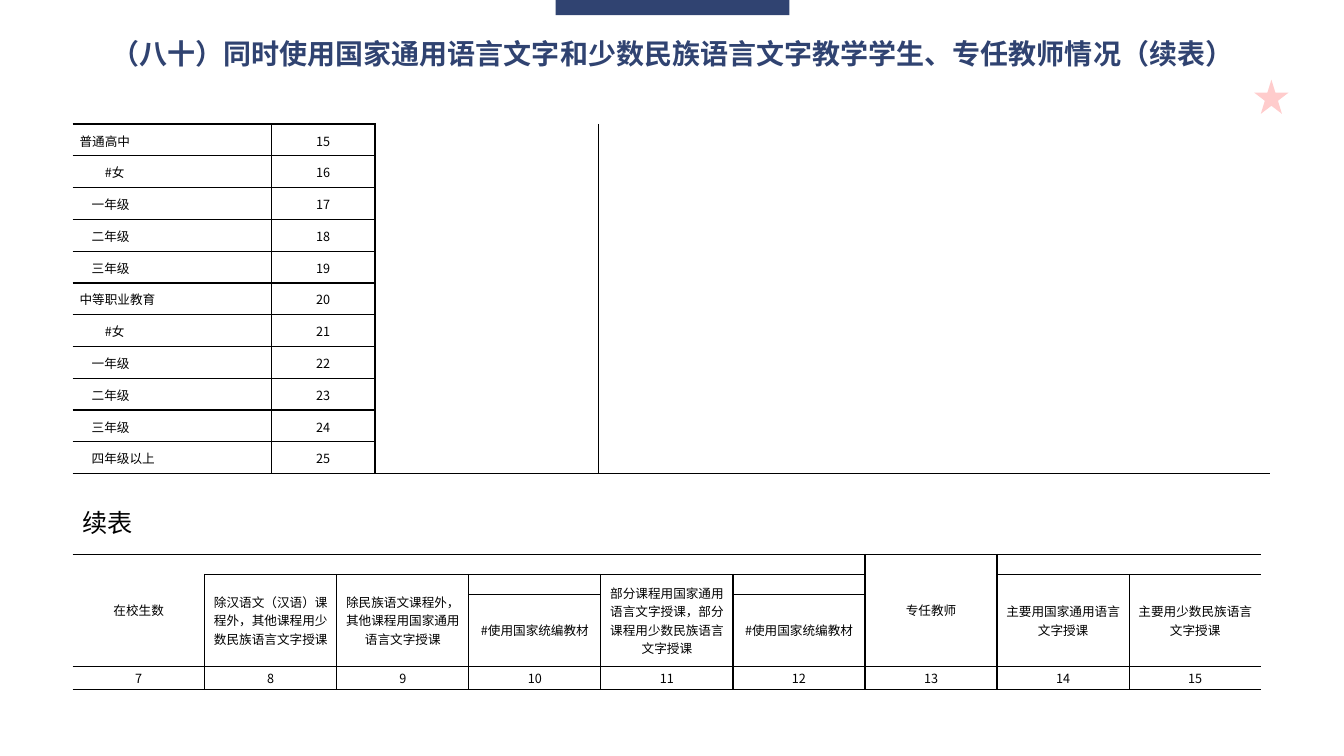
from dataclasses import dataclass

from lxml.etree import SubElement as Sub
from pptx import Presentation
from pptx.dml.color import RGBColor
from pptx.enum.shapes import MSO_SHAPE as Kind
from pptx.enum.text import MSO_ANCHOR as Anchor, MSO_AUTO_SIZE as Fit, PP_ALIGN as Align
from pptx.oxml.ns import qn
from pptx.util import Inches, Pt

NAVY = RGBColor(0x30, 0x43, 0x71)
RED = RGBColor(0xFF, 0x00, 0x00)
BLACK = RGBColor(0x00, 0x00, 0x00)
ARIAL, TIMES, NOTO = "Arial", "Times New Roman", "Noto Sans CJK SC"
PLAIN = "{2D5ABB26-0587-4C30-8999-92F81FD0307C}"


@dataclass
class Deco:
    kind: int
    box: tuple
    fill: RGBColor
    alpha: int = 100


@dataclass
class Label:
    text: str
    box: tuple
    size: int
    color: RGBColor
    bold: bool = False
    align: int = Align.LEFT


@dataclass
class Entry:
    row: int
    col: int
    text: str = ""
    sides: str = "LRTB"
    span: int = 1
    align: int = Align.CENTER
    indent: float = 0
    lead: int = 0


DECOS = [
    Deco(Kind.STAR_5_POINT, (12.44, 0.79, 0.34, 0.34), RED, 20),
    Deco(Kind.RECTANGLE, (5.51, -0.01, 2.32, 0.16), NAVY),
]
LABELS = [
    Label("（八十）同时使用国家通用语言文字和少数民族语言文字教学学生、专任教师情况（续表）",
          (0.96, 0.31, 11.42, 0.44), 20, NAVY, True, Align.CENTER),
    Label("续表", (0.72, 4.98, 0.71, 0.4), 18, BLACK),
]

# Grade names with their first-line indents
GRADES = [
    ("普通高中", 0), ("#女", 0.25), ("一年级", 0.12), ("二年级", 0.12),
    ("三年级", 0.12), ("中等职业教育", 0), ("#女", 0.25), ("一年级", 0.12),
    ("二年级", 0.12), ("三年级", 0.12), ("四年级以上", 0.12),
]
BOOKS = "#使用国家统编教材"
HEADS = [
    Entry(0, 0, "在校生数", "TB", 3),
    *[Entry(0, col, sides="TB") for col in (1, 2, 3, 4, 7, 8)],
    Entry(0, 5, sides="RTB"),
    Entry(0, 6, "专任教师", "LTB", 3),
    Entry(1, 1, "除汉语文（汉语）课程外，其他课程用少数民族语言文字授课", span=2),
    Entry(1, 2, "除民族语文课程外，其他课程用国家通用语言文字授课", "LTB", 2),
    Entry(1, 3, sides="RTB"),
    Entry(1, 4, "部分课程用国家通用语言文字授课，部分课程用少数民族语言文字授课", "LTB", 2),
    Entry(1, 5, sides="RTB"),
    Entry(1, 7, "主要用国家通用语言文字授课", span=2),
    Entry(1, 8, "主要用少数民族语言文字授课", "LTB", 2),
    Entry(2, 3, BOOKS),
    Entry(2, 5, BOOKS),
]


def style(run, face: str, size: int, color: RGBColor, bold: bool = False) -> None:
    font = run.font
    font.name, font.size, font.bold = face, Pt(size), bold
    font.color.rgb = color
    Sub(font._element, qn("a:ea"), typeface=NOTO)


def add_deco(slide, deco: Deco) -> None:
    shape = slide.shapes.add_shape(deco.kind, *map(Inches, deco.box))
    shape.shadow.inherit = False
    shape.line.fill.background()
    shape.fill.solid()
    shape.fill.fore_color.rgb = deco.fill
    if deco.alpha < 100:
        tint = shape._element.spPr.find(".//" + qn("a:srgbClr"))
        Sub(tint, qn("a:alpha"), val=str(deco.alpha * 1000))


def add_label(slide, label: Label) -> None:
    frame = slide.shapes.add_textbox(*map(Inches, label.box)).text_frame
    frame.word_wrap = False
    frame.auto_size = Fit.SHAPE_TO_FIT_TEXT
    frame.text = label.text
    para = frame.paragraphs[0]
    para.alignment = label.align
    style(para.runs[0], ARIAL, label.size, label.color, label.bold)


def set_edges(cell, sides: str) -> None:
    props = cell._tc.get_or_add_tcPr()
    for side in sides:
        edge = Sub(props, qn(f"a:ln{side}"), w=str(Pt(1)))
        fill = Sub(edge, qn("a:solidFill"))
        Sub(fill, qn("a:srgbClr"), val=str(BLACK))


def fill_cell(table, entry: Entry) -> None:
    cell = table.cell(entry.row, entry.col)
    if entry.span > 1:
        cell.merge(table.cell(entry.row + entry.span - 1, entry.col))
    set_edges(cell, entry.sides)
    cell.fill.background()
    cell.vertical_anchor = Anchor.MIDDLE
    cell.margin_left = cell.margin_right = Inches(0.07)
    cell.margin_top = cell.margin_bottom = 0
    para = cell.text_frame.paragraphs[0]
    para.alignment = entry.align
    if entry.lead:
        para.line_spacing = Pt(entry.lead)
    if entry.indent:
        para._p.get_or_add_pPr().set("indent", str(Inches(entry.indent)))
    if not entry.text:
        Sub(para._p, qn("a:endParaRPr"), sz="900")
        return
    # The number sign and the words take different faces
    words = entry.text.lstrip("#")
    for part in ("#", words) if words != entry.text else (words,):
        run = para.add_run()
        run.text = part
        style(run, NOTO if part == "#" or part.isdigit() else TIMES, 9, BLACK)


def add_grid(slide, box: tuple, rows: list[float], cols: list[float], cells: list[Entry]) -> None:
    frame = slide.shapes.add_table(len(rows), len(cols), *map(Inches, box))
    table = frame.table
    table.first_row = table.horz_banding = False
    table._tbl.tblPr.find(qn("a:tableStyleId")).text = PLAIN
    for row, high in zip(table.rows, rows):
        row.height = Inches(high)
    for col, wide in zip(table.columns, cols):
        col.width = Inches(wide)
    for entry in cells:
        fill_cell(table, entry)


def grade_cells() -> list[Entry]:
    cells = []
    last = len(GRADES) - 1
    for row, (name, indent) in enumerate(GRADES):
        align = Align.JUSTIFY if row < 2 else Align.LEFT
        base = "B" if row == last else ""
        cells += [
            Entry(row, 0, name, "RTB", align=align, indent=indent, lead=14),
            Entry(row, 1, str(row + 15), lead=14),
            Entry(row, 2, sides="L" + base),
            *[Entry(row, col, sides=base) for col in (3, 4, 5)],
        ]
    return cells


def count_cells() -> list[Entry]:
    edges = {0: "RTB", 8: "LTB"}
    return [Entry(3, col, str(col + 7), edges.get(col, "LRTB")) for col in range(9)]


def main() -> None:
    deck = Presentation()
    deck.slide_width, deck.slide_height = Inches(13.33), Inches(7.5)
    slide = deck.slides.add_slide(deck.slide_layouts[6])
    for deco in DECOS:
        add_deco(slide, deco)
    for label in LABELS:
        add_label(slide, label)
    # Upper table: grades
    add_grid(slide, (0.72, 1.23, 11.88, 3.47), [3.47 / 11] * 11,
             [1.97, 1.03] + [2.22] * 4, grade_cells())
    # Lower table: column heads and numbers
    add_grid(slide, (0.72, 5.5, 11.79, 1.35), [0.2, 0.2, 0.71, 0.23],
             [1.31] * 9, HEADS + count_cells())
    deck.save("out.pptx")


if __name__ == "__main__":
    main()
